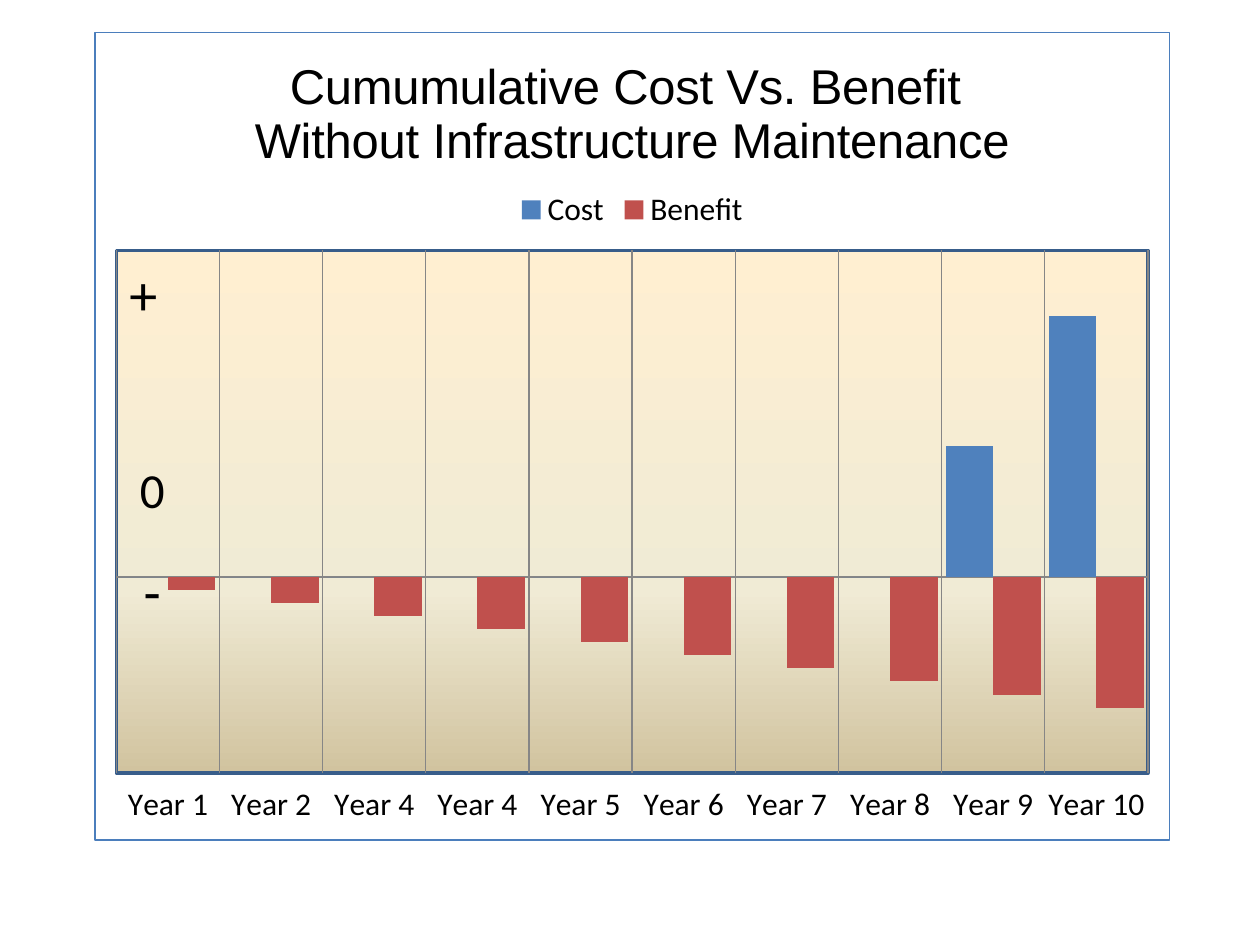
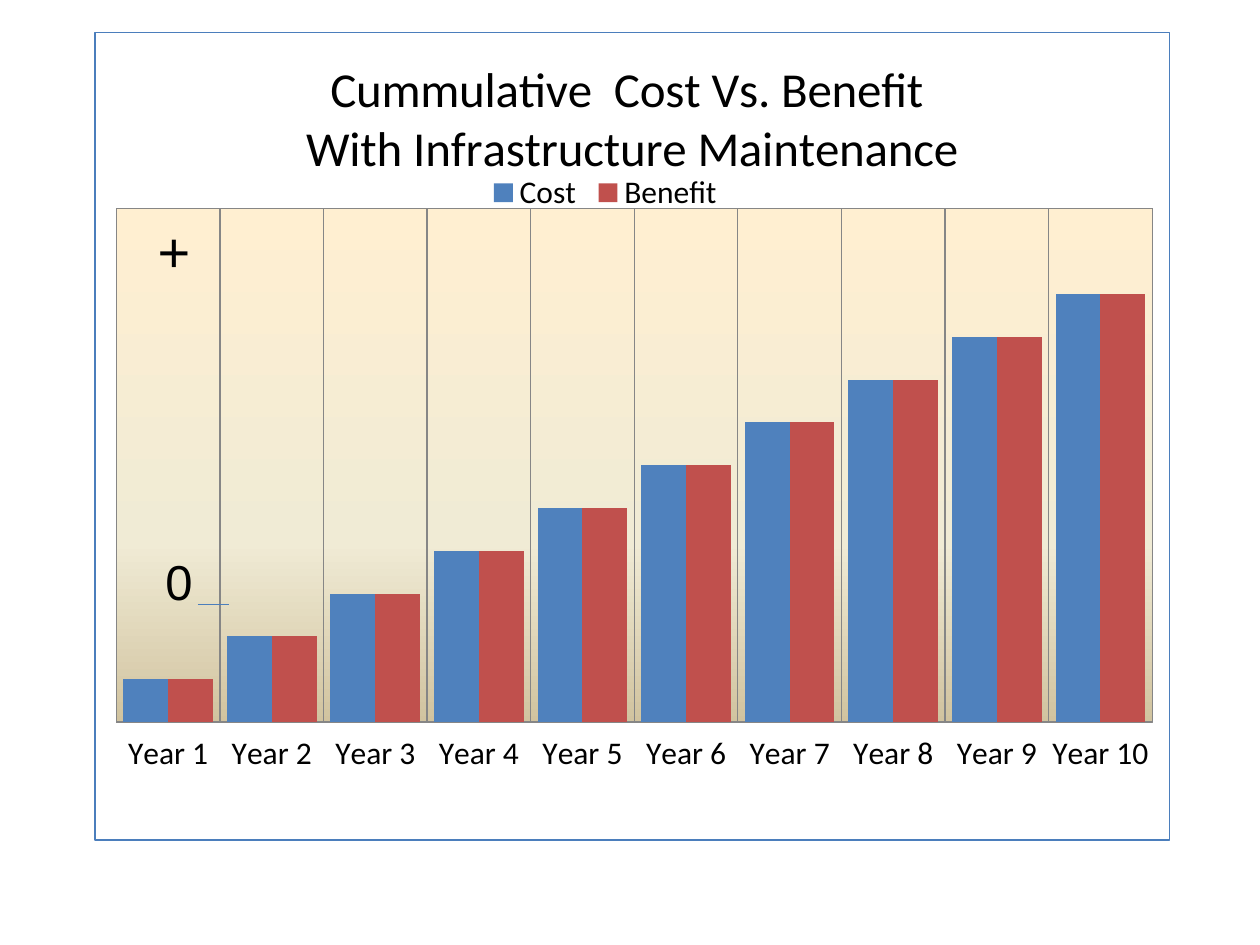
from dataclasses import dataclass

from lxml import etree
from pptx import Presentation
from pptx.chart.data import CategoryChartData
from pptx.dml.color import RGBColor
from pptx.enum.chart import (XL_CHART_TYPE, XL_LEGEND_POSITION,
                             XL_TICK_LABEL_POSITION, XL_TICK_MARK)
from pptx.enum.shapes import MSO_CONNECTOR
from pptx.enum.text import MSO_AUTO_SIZE, PP_ALIGN
from pptx.oxml import parse_xml
from pptx.oxml.ns import nsdecls, qn
from pptx.util import Cm, Pt

COLUMNS = XL_CHART_TYPE.COLUMN_CLUSTERED
LEGEND_TOP = XL_LEGEND_POSITION.TOP
LABELS_LOW = XL_TICK_LABEL_POSITION.LOW
NO_TICKS = XL_TICK_MARK.NONE
STRAIGHT = MSO_CONNECTOR.STRAIGHT
FIT_SHAPE = MSO_AUTO_SIZE.SHAPE_TO_FIT_TEXT
CENTER = PP_ALIGN.CENTER


@dataclass(frozen=True)
class Theme:
    text: str = "000000"
    cost: str = "4F81BD"
    benefit: str = "C0504D"
    border: str = "4B7EBC"
    grid: str = "868686"
    plot_frame: str = "385D8A"
    plot_stops: tuple = ((0, "FFEFD1"), (65, "F0EBD5"), (100, "D1C39F"))
    body_font: str = "Calibri"
    alt_font: str = "Arial"
    label_size: int = 18
    title_size: int = 28
    zero_size: int = 28
    sign_size: int = 32
    thin: float = 0.75


THEME = Theme()
CHART_BOX = Cm(1.9), Cm(0.64), Cm(21.69), Cm(16.31)
MARK_WIDTH = 2.34


def set_text(tf, text, size, font=THEME.body_font, color=THEME.text, align=CENTER):
    """Write one paragraph per line of text."""
    for i, line in enumerate(text.split("\n")):
        p = tf.add_paragraph() if i else tf.paragraphs[0]
        p.alignment = align
        r = p.add_run()
        r.text = line
        r.font.size, r.font.name, r.font.bold = Pt(size), font, False
        r.font.color.rgb = RGBColor.from_string(color)


def set_line(line, color, width=THEME.thin):
    line.color.rgb = RGBColor.from_string(color)
    line.width = Pt(width)


def solid_line_xml(color, width):
    return (f'<a:ln w="{Pt(width)}"><a:solidFill><a:srgbClr val="{color}"/>'
            '</a:solidFill></a:ln>')


def chart_sppr(fill_xml, color, width):
    return parse_xml(f'<c:spPr {nsdecls("c", "a")}>{fill_xml}'
                     f'{solid_line_xml(color, width)}</c:spPr>')


def gradient_xml():
    stops = "".join(f'<a:gs pos="{pos * 1000}"><a:srgbClr val="{color}"/></a:gs>'
                    for pos, color in THEME.plot_stops)
    return (f'<a:gradFill><a:gsLst>{stops}</a:gsLst>'
            '<a:lin ang="5400000" scaled="0"/></a:gradFill>')


def place(parent, index, box, inner=False):
    """Fix a chart part at x, y, w, h, as fractions of the chart."""
    for old in parent.findall(qn("c:layout")):
        parent.remove(old)
    layout = parse_xml(f'<c:layout {nsdecls("c")}><c:manualLayout/></c:layout>')
    settings = [("layoutTarget", "inner")] if inner else []
    settings += [("xMode", "edge"), ("yMode", "edge"), *zip("xywh", box)]
    for tag, value in settings:
        etree.SubElement(layout[0], qn(f"c:{tag}")).set("val", str(value))
    parent.insert(index, layout)


def style_axes(chart, low, high):
    cat, val = chart.category_axis, chart.value_axis
    cat.tick_label_position = LABELS_LOW
    cat.major_tick_mark = cat.minor_tick_mark = NO_TICKS
    cat.has_major_gridlines = True
    set_line(cat.major_gridlines.format.line, THEME.grid)
    set_line(cat.format.line, THEME.grid)
    val.minimum_scale, val.maximum_scale = low, high
    val.has_major_gridlines = False
    val.visible = False


def add_cost_benefit_chart(s, title, years, cost, benefit, scale, gap, plot_box,
                           title_font=THEME.body_font, legend_box=None,
                           frame=(THEME.grid, THEME.thin)):
    data = CategoryChartData()
    data.categories = years
    data.add_series("Cost", cost)
    data.add_series("Benefit", benefit)
    chart = s.shapes.add_chart(COLUMNS, *CHART_BOX, data).chart
    chart.font.size, chart.font.name = Pt(THEME.label_size), THEME.body_font
    chart.font.color.rgb = RGBColor.from_string(THEME.text)
    chart.has_title = True
    set_text(chart.chart_title.text_frame, title, THEME.title_size, title_font)
    chart.has_legend = True
    chart.legend.position = LEGEND_TOP
    chart.legend.include_in_layout = False
    style_axes(chart, *scale)

    plot = chart.plots[0]
    plot.gap_width, plot.overlap = gap, 0
    plot.vary_by_categories = False
    for series, color in zip(plot.series, (THEME.cost, THEME.benefit)):
        series.invert_if_negative = False
        series.format.fill.solid()
        series.format.fill.fore_color.rgb = RGBColor.from_string(color)

    root = chart.element.find(qn("c:chart"))
    area = root.find(qn("c:plotArea"))
    place(area, 0, plot_box, inner=True)
    area.append(chart_sppr(gradient_xml(), *frame))
    if legend_box:
        place(root.find(qn("c:legend")), 1, legend_box)
    root.addnext(chart_sppr("<a:noFill/>", THEME.border, THEME.thin))


def add_scale_mark(s, text, left, top, size, font=THEME.body_font):
    height = 1.45 if size == THEME.zero_size else 1.63
    tf = s.shapes.add_textbox(Cm(left), Cm(top), Cm(MARK_WIDTH), Cm(height)).text_frame
    tf.word_wrap = True
    tf.auto_size = FIT_SHAPE
    set_text(tf, text, size, font)


def add_zero_tick(s, left, right, y):
    tick = s.shapes.add_connector(STRAIGHT, Cm(left), Cm(y), Cm(right), Cm(y))
    set_line(tick.line, THEME.border)
    etree.SubElement(tick.element.spPr, qn("a:effectLst"))


def build_without_maintenance(s):
    years = [f"Year {n}" for n in (1, 2, 4, 4, 5, 6, 7, 8, 9, 10)]
    add_cost_benefit_chart(
        s, "Cumumulative Cost Vs. Benefit \nWithout Infrastructure Maintenance",
        years, cost=[0] * 8 + [50, 100], benefit=range(-5, -51, -5),
        scale=(-75, 125), gap=17, plot_box=(0.02, 0.27, 0.96, 0.647),
        title_font=THEME.alt_font, frame=(THEME.plot_frame, 2))
    add_scale_mark(s, "0", 1.9, 9.14, THEME.zero_size)
    add_scale_mark(s, "+ ", 1.85, 5.11, THEME.sign_size)
    add_scale_mark(s, "-", 1.9, 11.1, THEME.sign_size)


def build_with_maintenance(s):
    growth = range(10, 101, 10)
    add_cost_benefit_chart(
        s, "Cummulative  Cost Vs. Benefit \nWith Infrastructure Maintenance",
        [f"Year {n}" for n in range(1, 11)], cost=growth, benefit=growth,
        scale=(0, 120), gap=31, plot_box=(0.02, 0.218, 0.964, 0.636),
        legend_box=(0.36, 0.175, 0.23, 0.045))
    add_scale_mark(s, "0", 2.44, 11, THEME.zero_size, THEME.alt_font)
    add_scale_mark(s, "+", 2.34, 4.24, THEME.sign_size, THEME.alt_font)
    add_zero_tick(s, 3.99, 4.62, 12.19)


def main():
    prs = Presentation()
    prs.slide_width, prs.slide_height = Cm(25.4), Cm(19.05)
    blank = prs.slide_layouts[6]
    for build in (build_without_maintenance, build_with_maintenance):
        build(prs.slides.add_slide(blank))
    prs.save("out.pptx")


if __name__ == "__main__":
    main()
